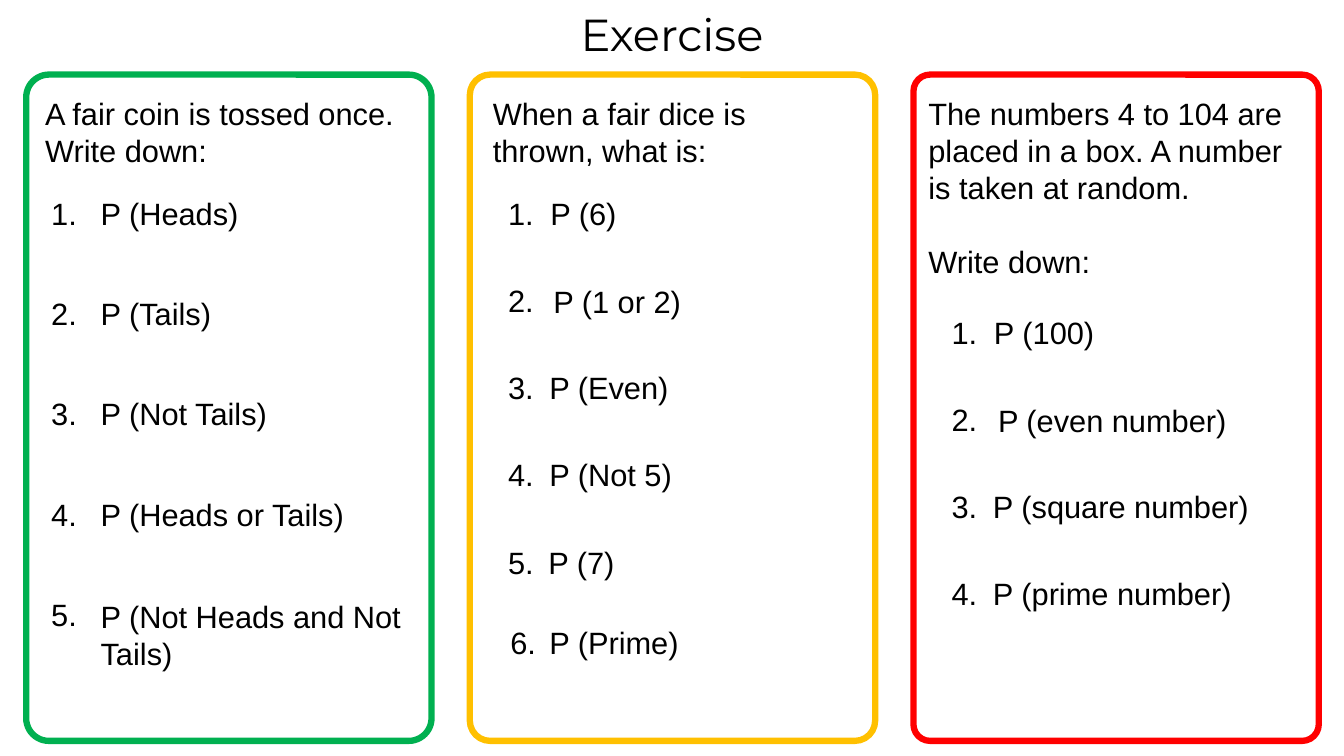
from pptx import Presentation
from pptx.dml.color import RGBColor
from pptx.enum.shapes import MSO_SHAPE
from pptx.enum.text import MSO_ANCHOR, MSO_AUTO_SIZE, PP_ALIGN
from pptx.util import Inches, Pt

BLACK = RGBColor(0, 0, 0)
WHITE = RGBColor(255, 255, 255)
GREEN = RGBColor(0, 176, 80)
AMBER = RGBColor(255, 192, 0)
RED = RGBColor(255, 0, 0)

CARD_LEFT, CARD_TOP = 0.26, 0.74
CARD_WIDTH, CARD_HEIGHT = 4.02, 6.61
CARD_PITCH = 4.4
INTRO_TOP = 0.89
NUMBER_WIDTH = 0.49
LINE_HEIGHT, PADDING = 0.37, 0.1

CARDS = [
    {
        "colour": GREEN, "corner": 0.056,
        "intro": ["A fair coin is tossed once.", "Write down:"],
        "intro_offset": 0.09, "intro_width": 3.73, "intro_lines": 2, "intro_gap": 0,
        "number_offset": 0.15, "answer_offset": 0.64, "first_row": 1.88, "row_pitch": 0.995,
        "questions": [
            ("P (Heads)", 0, 0, 0),
            ("P (Tails)", 0, 0, 0),
            ("P (Not Tails)", 0, 0, 0),
            ("P (Heads or Tails)", 0, 0, 0),
            ("P (Not Heads and Not Tails)", 0, 0.02, 0),
        ],
    },
    {
        "colour": AMBER, "corner": 0.05,
        "intro": ["When a fair dice is thrown, what is:"],
        "intro_offset": 0.13, "intro_width": 3.26, "intro_lines": 2, "intro_gap": 0,
        "number_offset": 0.28, "answer_offset": 0.69, "first_row": 1.88, "row_pitch": 0.865,
        "questions": [
            ("P (6)", 0.01, 0, 0),
            ("P (1 or 2)", 0.04, 0.01, 0),
            ("P (Even)", 0, 0, 0),
            ("P (Not 5)", 0, 0, 0),
            ("P (7)", -0.01, 0.01, 0),
            ("P (Prime)", 0, 0, -0.07),
        ],
    },
    {
        "colour": RED, "corner": 0.041,
        "intro": [
            "The numbers 4 to 104 are placed in a box. A number is taken at random.",
            "Write down:",
        ],
        "intro_offset": 0.05, "intro_width": 3.94, "intro_lines": 5, "intro_gap": 26.4,
        "number_offset": 0.28, "answer_offset": 0.69, "first_row": 3.06, "row_pitch": 0.865,
        "questions": [
            ("P (100)", 0.01, 0, 0),
            ("P (even number)", 0.05, 0.01, 0),
            ("P (square number)", 0, 0, 0),
            ("P (prime number)", 0, 0, 0),
        ],
    },
]


def add_run(paragraph, text, size=22, font_name="Arial"):
    run = paragraph.add_run()
    run.text = text
    run.font.size = Pt(size)
    run.font.name = font_name
    run.font.color.rgb = BLACK


def add_text(slide, lines, left, top, width, line_count=1, gap=0):
    height = line_count * LINE_HEIGHT + PADDING
    box = slide.shapes.add_textbox(Inches(left), Inches(top), Inches(width), Inches(height))
    frame = box.text_frame
    frame.word_wrap = True
    for index, line in enumerate(lines):
        paragraph = frame.add_paragraph() if index else frame.paragraphs[0]
        if index and gap:
            paragraph.space_before = Pt(gap)
        add_run(paragraph, line)


def add_title(slide):
    title = slide.shapes.title
    title.left, title.top = Inches(4.63), Inches(0.02)
    title.width, title.height = Inches(4.07), Inches(0.64)
    frame = title.text_frame
    frame.auto_size = MSO_AUTO_SIZE.NONE
    frame.vertical_anchor = MSO_ANCHOR.TOP
    paragraph = frame.paragraphs[0]
    paragraph.alignment = PP_ALIGN.CENTER
    add_run(paragraph, "Exercise", 32, "Montserrat")


def add_frame(slide, left, colour, corner):
    shape = slide.shapes.add_shape(
        MSO_SHAPE.ROUNDED_RECTANGLE,
        Inches(left), Inches(CARD_TOP), Inches(CARD_WIDTH), Inches(CARD_HEIGHT),
    )
    shape.adjustments[0] = corner
    shape.shadow.inherit = False
    shape.fill.solid()
    shape.fill.fore_color.rgb = WHITE
    shape.line.color.rgb = colour
    shape.line.width = Pt(4.5)


def add_questions(slide, left, card):
    answer_left = left + card["answer_offset"]
    answer_width = left + CARD_WIDTH + 0.06 - answer_left
    for index, (answer, shift, drop, row_shift) in enumerate(card["questions"]):
        top = card["first_row"] + index * card["row_pitch"] + row_shift
        number_left = left + card["number_offset"]
        add_text(slide, [f"{index + 1}."], number_left - row_shift / 3, top, NUMBER_WIDTH)
        line_count = 2 if len(answer) > 20 else 1
        add_text(slide, [answer], answer_left + shift, top + drop, answer_width, line_count)


def add_card(slide, column, card):
    left = CARD_LEFT + column * CARD_PITCH
    add_frame(slide, left, card["colour"], card["corner"])
    add_text(slide, card["intro"], left + card["intro_offset"], INTRO_TOP,
             card["intro_width"], card["intro_lines"], card["intro_gap"])
    add_questions(slide, left, card)


def main():
    presentation = Presentation()
    presentation.slide_width = Inches(13.33)
    presentation.slide_height = Inches(7.5)
    slide = presentation.slides.add_slide(presentation.slide_layouts[5])
    add_title(slide)
    for column, card in enumerate(CARDS):
        add_card(slide, column, card)
    presentation.save("out.pptx")


if __name__ == "__main__":
    main()
